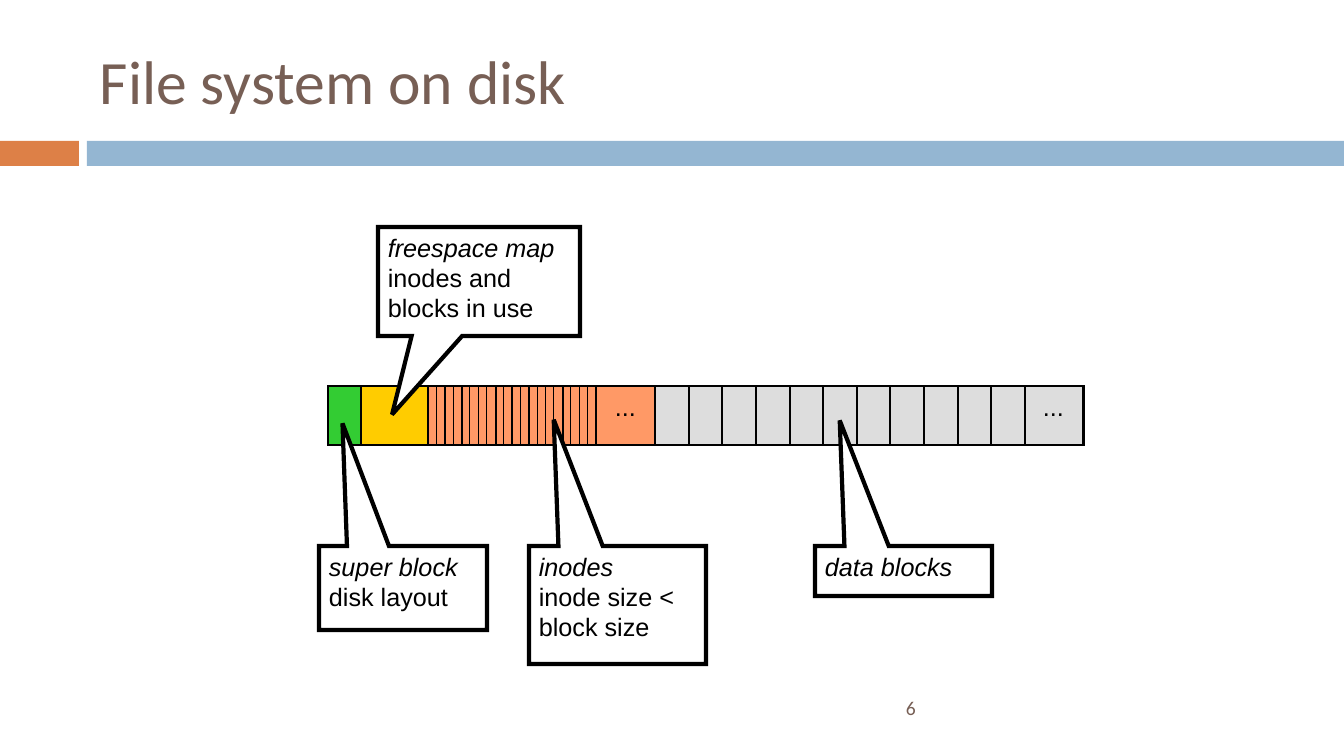
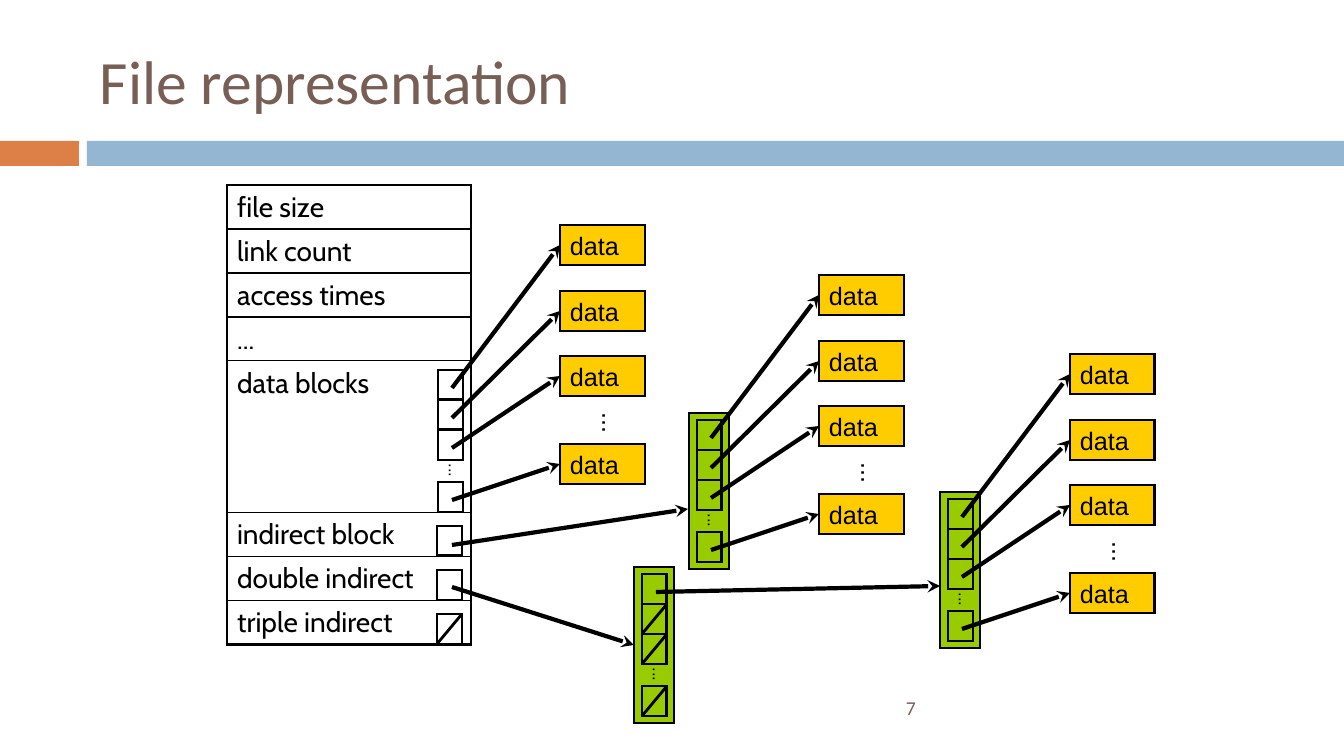
from dataclasses import dataclass

from lxml.etree import SubElement
from pptx import Presentation
from pptx.dml.color import RGBColor
from pptx.enum.shapes import MSO_CONNECTOR as Connector, MSO_SHAPE as Preset
from pptx.enum.text import MSO_ANCHOR as Anchor, PP_ALIGN as Align
from pptx.oxml.ns import qn
from pptx.util import Pt

EMU_PER_PX = 914400 / 100.8
SLIDE_WIDTH, SLIDE_HEIGHT = 1344, 756
LEFT_SIDE = 1


def px(length):
    return round(length * EMU_PER_PX)


@dataclass(frozen=True)
class Theme:
    black: str = "000000"
    white: str = "FFFFFF"
    heading: str = "775F55"
    band_accent: str = "DD8047"
    band_main: str = "94B6D2"
    super_block: str = "33CC33"
    data: str = "FFCC00"
    inode: str = "FF9966"
    disk_block: str = "DDDDDD"
    pointer_block: str = "99CC00"
    heading_font: str = "Calibri"
    body_font: str = "Arial"
    table_font: str = "Cabin"
    title_size: int = 44
    table_size: int = 20
    body_size: int = 18
    number_size: int = 14
    small_size: int = 12
    hairline: float = 0.75
    rule: float = 1
    outline: float = 2
    frame: float = 2.25
    heavy: float = 3


class Deck:
    def __init__(self, theme):
        self.theme = theme
        self.presentation = Presentation()
        self.presentation.slide_width = px(SLIDE_WIDTH)
        self.presentation.slide_height = px(SLIDE_HEIGHT)
        self.slide = None

    def new_slide(self, title, number):
        theme = self.theme
        self.slide = self.presentation.slides.add_slide(self.presentation.slide_layouts[6])
        self.box(0, 141, 79, 25, theme.band_accent, line_width=None)
        self.box(87, 141, SLIDE_WIDTH - 87, 25, theme.band_main, line_width=None)
        for text, area, size in (
            (title, (90, 25, 1198, 109), theme.title_size),
            (str(number), (896, 688, 392, 40), theme.number_size),
        ):
            frame = self.slide.shapes.add_textbox(*map(px, area)).text_frame
            frame.word_wrap = True
            frame.vertical_anchor = Anchor.MIDDLE
            self.set_lines(frame, [text], size, theme.heading_font, theme.heading)

    def set_lines(self, frame, lines, size=None, font=None, color=None):
        """Fill a text frame with one left-aligned paragraph per line."""
        theme = self.theme
        for index, line in enumerate(lines):
            paragraph = frame.add_paragraph() if index else frame.paragraphs[0]
            paragraph.text = line
            paragraph.alignment = Align.LEFT
            paragraph.font.size = Pt(size or theme.body_size)
            paragraph.font.name = font or theme.body_font
            paragraph.font.color.rgb = RGBColor.from_string(color or theme.black)

    def box(self, left, top, width, height, fill=None, line_width=Theme.outline,
            preset=Preset.RECTANGLE, lines=()):
        shape = self.slide.shapes.add_shape(preset, *map(px, (left, top, width, height)))
        shape.shadow.inherit = False
        if fill:
            shape.fill.solid()
            shape.fill.fore_color.rgb = RGBColor.from_string(fill)
        else:
            shape.fill.background()
        if line_width:
            shape.line.width = Pt(line_width)
            shape.line.color.rgb = RGBColor.from_string(self.theme.black)
            SubElement(shape.line._get_or_add_ln(), qn("a:miter"), lim="800000")
        else:
            shape.line.fill.background()
        if lines:
            shape.text_frame.word_wrap = True
            shape.text_frame.vertical_anchor = Anchor.TOP
            self.set_lines(shape.text_frame, lines)
        return shape

    def callout(self, area, tip, lines):
        """Draw a callout whose first line is italic; tip is relative to its size."""
        shape = self.box(*area, self.theme.white, self.theme.heavy,
                         Preset.RECTANGULAR_CALLOUT, lines)
        shape.adjustments[0], shape.adjustments[1] = tip
        shape.text_frame.paragraphs[0].font.italic = True

    def ellipsis(self, left, top, width, height, size=None, rotation=0):
        shape = self.slide.shapes.add_textbox(*map(px, (left, top, width, height)))
        shape.rotation = rotation
        shape.text_frame.word_wrap = False
        self.set_lines(shape.text_frame, ["..."], size)

    def line(self, start, end, width=Theme.outline):
        connector = self.slide.shapes.add_connector(
            Connector.STRAIGHT, *map(px, (*start, *end)))
        connector.line.width = Pt(width)
        connector.line.color.rgb = RGBColor.from_string(self.theme.black)
        SubElement(connector._element.spPr, qn("a:effectLst"))
        return connector

    def arrow(self, start, end):
        connector = self.line(start, end, self.theme.heavy)
        SubElement(connector.line._get_or_add_ln(), qn("a:tailEnd"), type="stealth")
        return connector

    def arrow_to_box(self, start, target):
        self.arrow(start, start).end_connect(target, LEFT_SIDE)

    def field_table(self, left, top, width, rows):
        """Draw a one-column table from (text, height) rows."""
        theme = self.theme
        heights = [height for _, height in rows]
        table = self.slide.shapes.add_table(
            len(rows), 1, *map(px, (left, top, width, sum(heights)))).table
        table.first_row = table.horz_banding = False
        for index, (text, height) in enumerate(rows):
            table.rows[index].height = px(height)
            cell = table.cell(index, 0)
            bottom = theme.frame if index == len(rows) - 1 else theme.rule
            for side, border in zip("LRTB", (theme.frame, theme.frame, theme.rule, bottom)):
                self.border(cell, side, border)
            cell.fill.background()
            self.set_lines(cell.text_frame, [text], theme.table_size, theme.table_font)

    def border(self, cell, side, width):
        properties = cell._tc.get_or_add_tcPr()
        edge = SubElement(properties, qn(f"a:ln{side}"), w=str(Pt(width)))
        SubElement(SubElement(edge, qn("a:solidFill")), qn("a:srgbClr"), val=self.theme.black)

    def slot(self, left, top, crossed=False):
        self.box(left, top, 25, 30)
        if crossed:
            self.line((left, top + 30), (left + 25, top))

    def pointer_column(self, left, top, filled=True, crossed=()):
        """Draw four slots, on a block if filled; return the block and arrow starts."""
        block = self.box(left, top, 40, 156, self.theme.pointer_block) if filled else None
        slot_tops = [top + offset for offset in (7, 37, 67, 119)]
        for index, slot_top in enumerate(slot_tops):
            self.slot(left + 8, slot_top, index in crossed)
        self.ellipsis(left + 8, top + 93, 35, 30, self.theme.small_size, 90)
        return block, [(left + 22, slot_top + 18) for slot_top in slot_tops]

    def data_column(self, left, top, filled=True):
        """Draw a pointer column with an arrow from each slot to a data box."""
        _, starts = self.pointer_column(left, top, filled)
        for start, offset in zip(starts, (-138, -72, -7, 81)):
            data = self.box(left + 130, top + offset, 85, 40, self.theme.data, lines=["data"])
            self.arrow_to_box(start, data)
        self.ellipsis(left + 162, top + 40, 41, 40, rotation=90)


def disk_slide(deck):
    theme = deck.theme
    deck.new_slide("File system on disk", 6)

    def blocks(first, count, fill=None, line_width=theme.outline):
        """Draw a stretch of the disk, measured in blocks of 33.6 px."""
        left, right = (round(327.6 + 33.6 * edge) for edge in (first, first + count))
        deck.box(left, 386, right - left, 59, fill, line_width)

    inode_start, data_start, disk_end = 3, 9.75, 22.5
    blocks(1, 2, theme.data)
    blocks(inode_start, data_start - inode_start, theme.inode)
    blocks(0, 1, theme.super_block)
    blocks(data_start, disk_end - data_start, theme.disk_block)
    for index in range(5):
        inode_block = inode_start + index
        blocks(inode_block, 1)
        for inode in (0, 0.5):
            blocks(inode_block + inode, 0.25, line_width=theme.hairline)
    for index in range(6):
        blocks(data_start + 2 * index, 1)
    for left in (605, 1033):
        deck.ellipsis(left, 386, 41, 40)

    for area, tip, lines in (
        ((319, 546, 168, 84), (-0.36, -1.96), ["super block", "disk layout"]),
        ((378, 227, 202, 109), (-0.43, 1.22), ["freespace map", "inodes and blocks in use"]),
        ((529, 546, 177, 118), (-0.36, -1.57), ["inodes", "inode size < block size"]),
        ((815, 546, 177, 50), (-0.36, -3.01), ["data blocks"]),
    ):
        deck.callout(area, tip, lines)


def file_slide(deck):
    deck.new_slide("File representation", 7)
    row, data_row = 44, 152
    deck.field_table(227, 185, 244, [
        ("file size", row), ("link count", row), ("access times", row), ("...", row),
        ("data blocks", data_row),
        ("indirect block", row), ("double indirect", row), ("triple indirect", row),
    ])
    for index in range(3):
        deck.slot(437, 526 + row * index, crossed=index == 2)

    deck.data_column(430, 363, filled=False)
    deck.data_column(689, 413)
    deck.data_column(940, 492)
    double_block, starts = deck.pointer_column(634, 567, crossed=(1, 2, 3))
    deck.arrow((452, 545), (688, 509))
    deck.arrow_to_box((452, 587), double_block)
    deck.arrow(starts[0], (940, 586))


def main():
    deck = Deck(Theme())
    disk_slide(deck)
    file_slide(deck)
    deck.presentation.save("out.pptx")


if __name__ == "__main__":
    main()
